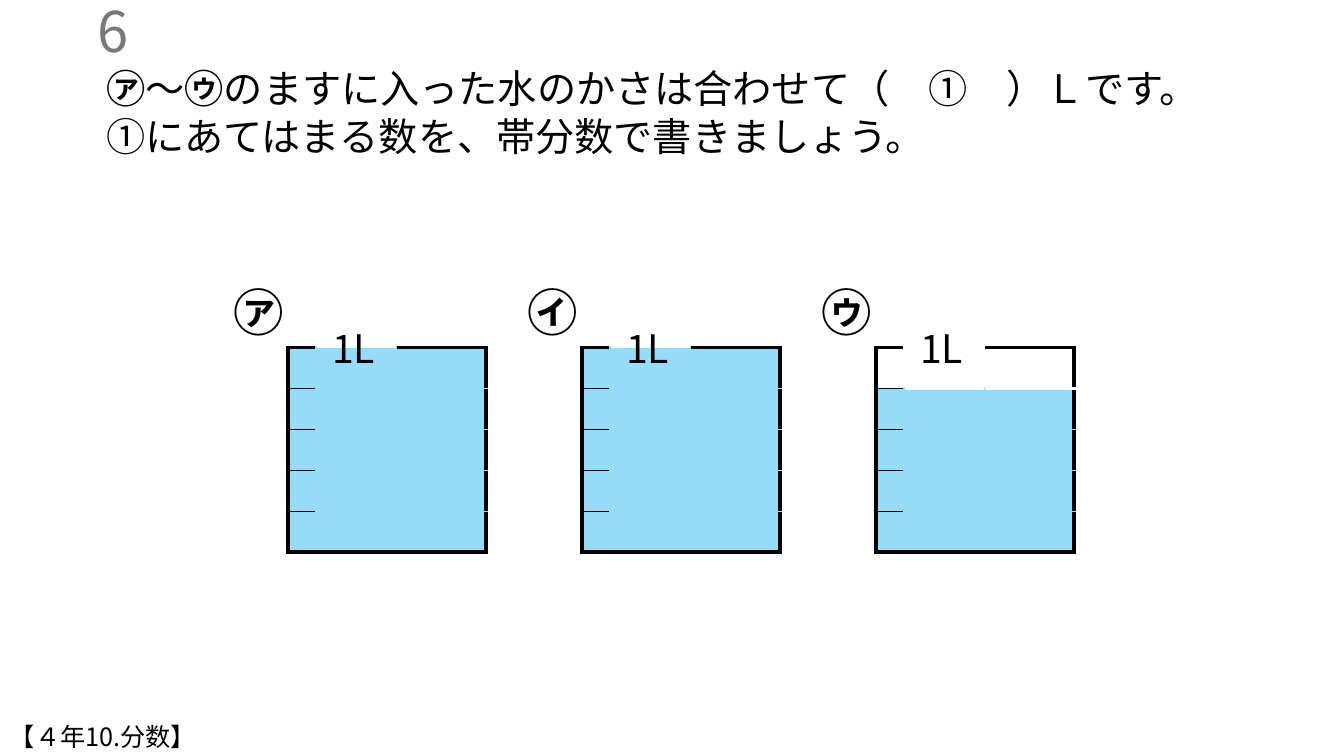
"""Build a fraction exercise slide with three one-litre measures of water."""
from lxml import etree
from pptx import Presentation
from pptx import util as u
from pptx.dml.color import RGBColor
from pptx.enum import text
from pptx.oxml import ns

PX = 9525
JAPANESE = "Noto Sans CJK JP"
BLACK, WHITE, GREY, WATER = "000000", "FFFFFF", "797979", "96DCF8"
COLUMNS = (27, 77, 85)
ROWS, ROW_HEIGHT = 5, 39
FIRST_LEFT, PITCH, TOP = 274, 280, 331


def px(length):
    return u.Emu(length * PX)


def colour(value):
    return RGBColor.from_string(value)


def add_text(page, place, lines, size, ink=BLACK, wrap=True, grow=True):
    """Add a box; each line is a list of (wording, bold, font) spans."""
    box = page.shapes.add_textbox(*map(px, place))
    frame = box.text_frame
    frame.word_wrap = wrap
    if grow:
        frame.auto_size = text.MSO_AUTO_SIZE.SHAPE_TO_FIT_TEXT
    for index, line in enumerate(lines):
        para = frame.add_paragraph() if index else frame.paragraphs[0]
        for wording, bold, font in line:
            span = para.add_run()
            span.text = wording
            span.font.size = u.Pt(size)
            span.font.bold = bold
            span.font.name = font
            span.font.color.rgb = colour(ink)
            east = etree.SubElement(span.font._element, ns.qn("a:ea"))
            east.set("typeface", JAPANESE)
    return frame


def add_border(cell, side, style):
    """Draw one side of a cell from a (colour, points) style or hide it."""
    line = etree.SubElement(cell._tc.get_or_add_tcPr(), ns.qn(f"a:ln{side}"))
    if style is None:
        etree.SubElement(line, ns.qn("a:noFill"))
        return
    ink, points = style
    line.set("w", str(u.Pt(points)))
    fill = etree.SubElement(line, ns.qn("a:solidFill"))
    etree.SubElement(fill, ns.qn("a:srgbClr")).set("val", ink)


def cell_borders(row, column, empty):
    """Return the borders of a cell in a measure with some empty top rows."""
    wall, tick, water = (BLACK, 3), (BLACK, 1), (WATER, 1)
    inner = (WHITE, 1) if row < empty else water
    top, bottom = water, water
    if row == 0:
        top = None if column == 1 else wall
    elif column == 0:
        top = tick
    elif row <= empty:
        top = (WHITE, 1)
    if row == ROWS - 1:
        bottom = wall
    elif column == 0:
        bottom = tick
    elif row < empty:
        bottom = (WHITE, 3)
    left = wall if column == 0 else inner
    right = wall if column == len(COLUMNS) - 1 else inner
    return {"L": left, "R": right, "T": top, "B": bottom}


def add_measure(page, left, empty):
    """Add a measure as a table whose left column carries the tick marks."""
    frame = page.shapes.add_table(ROWS, len(COLUMNS), px(left), px(TOP),
                                  px(sum(COLUMNS)), px(ROWS * ROW_HEIGHT))
    table = frame.table
    table.first_row = table.horz_banding = False
    for column, width in enumerate(COLUMNS):
        table.columns[column].width = px(width)
    for row in range(ROWS):
        table.rows[row].height = px(ROW_HEIGHT)
        for column in range(len(COLUMNS)):
            cell = table.cell(row, column)
            cell.margin_top = cell.margin_bottom = 0
            for side, style in cell_borders(row, column, empty).items():
                add_border(cell, side, style)
            if row < empty:
                cell.fill.background()
            else:
                cell.fill.solid()
                cell.fill.fore_color.rgb = colour(WATER)


def main():
    deck = Presentation()
    deck.slide_width, deck.slide_height = px(1280), px(720)
    page = deck.slides.add_slide(deck.slide_layouts[6])

    question = [
        [("㋐", True, JAPANESE), ("～", False, JAPANESE), ("㋒", True, JAPANESE),
         ("のますに入った水のかさは合わせて（　①　）Ｌです。", False, JAPANESE)],
        [("①にあてはまる数を、帯分数で書きましょう。", False, JAPANESE)],
    ]
    add_text(page, (92, 57, 1107, 100), question, 28)

    number = add_text(page, (-156, 10, 288, 38), [[("6", False, JAPANESE)]],
                      40, GREY, grow=False)
    number.vertical_anchor = text.MSO_ANCHOR.MIDDLE
    number.paragraphs[0].alignment = text.PP_ALIGN.RIGHT

    for index, (name, empty) in enumerate((("㋐", 0), ("㋑", 0), ("㋒", 1))):
        left = FIRST_LEFT + index * PITCH
        add_measure(page, left, empty)
        add_text(page, (left + 33, 304, 65, 55), [[("1L", False, JAPANESE)]],
                 28, wrap=False)
        add_text(page, (left - 61, 263, 61, 68), [[(name, True, JAPANESE)]], 36)

    source = [[("【４年", False, "Arial"), ("10.", False, JAPANESE),
               ("分数】", False, "Arial")]]
    add_text(page, (0, 682, 719, 38), source, 18)
    deck.save("out.pptx")


if __name__ == "__main__":
    main()
